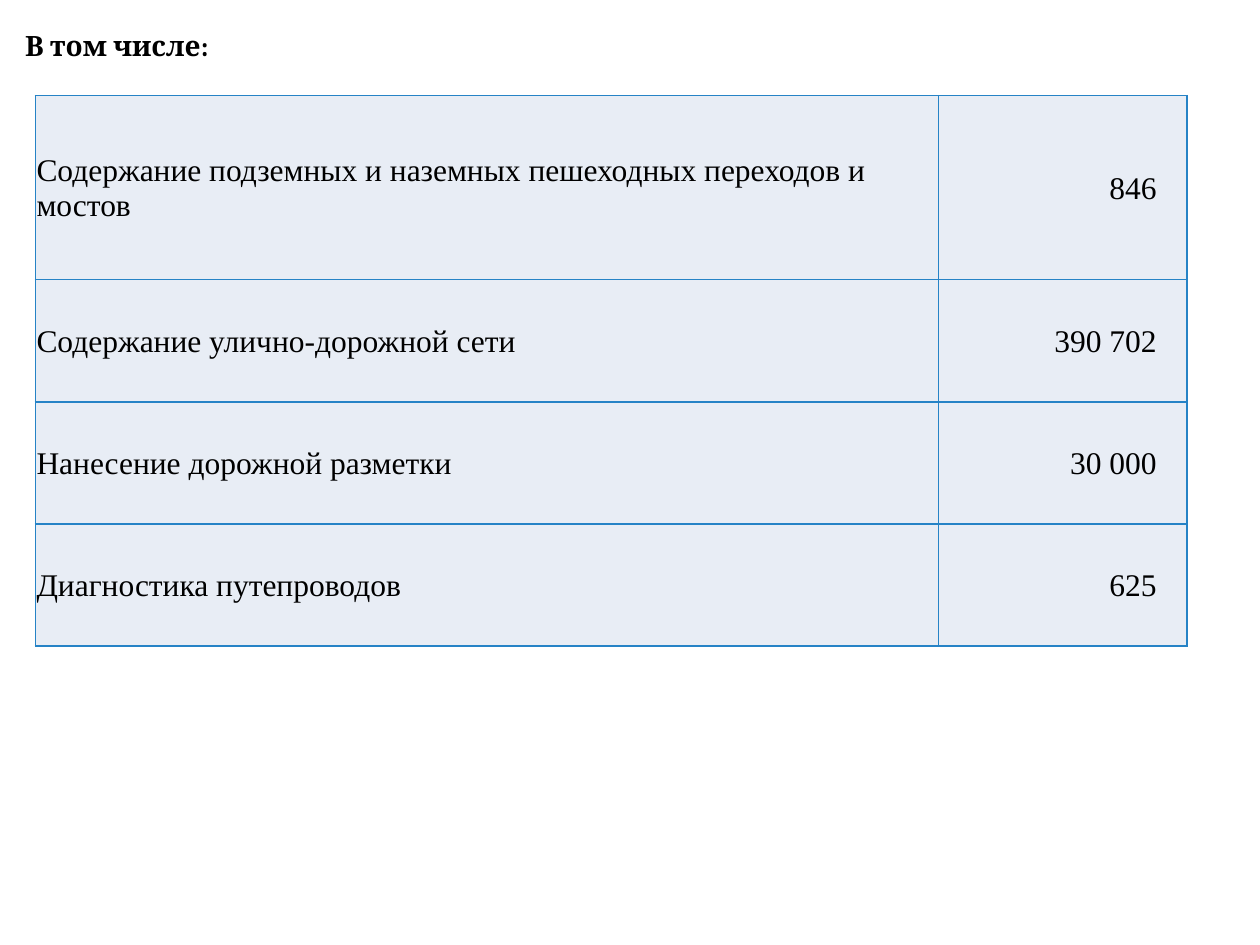
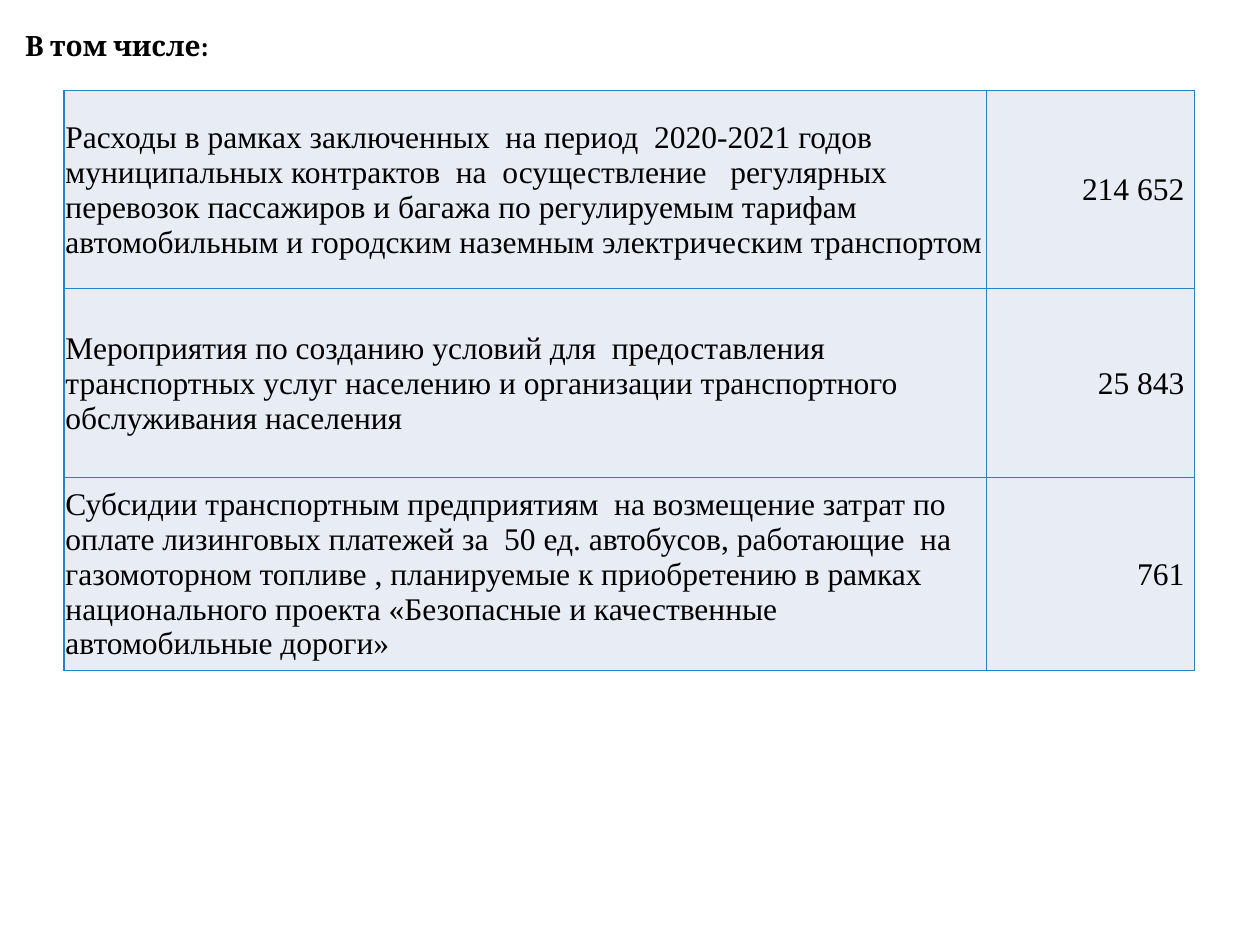
from lxml.etree import SubElement
from pptx import Presentation
from pptx.dml.color import RGBColor
from pptx.enum.text import MSO_ANCHOR, MSO_AUTO_SIZE, PP_ALIGN
from pptx.oxml.ns import qn
from pptx.util import Inches, Pt

BLACK = RGBColor(0x00, 0x00, 0x00)
BORDER = RGBColor(0x26, 0x83, 0xC6)
CELL_FILL = RGBColor(0xE8, 0xED, 0xF5)
TITLE_FONT, TABLE_FONT = "Cambria", "Times New Roman"
TITLE = "В том числе:"
TITLE_BOX = (0, 0.21, 10, 0.55)
CELL_MARGIN = 0.01

ROAD_COSTS = [
    ("Содержание подземных и наземных пешеходных переходов и мостов", "846"),
    ("Содержание улично-дорожной сети", "390 702"),
    ("Нанесение дорожной разметки", "30 000"),
    ("Диагностика путепроводов", "625"),
]
TRANSPORT_COSTS = [
    ("Расходы в рамках заключенных  на период  2020-2021 годов "
     "муниципальных контрактов  на  осуществление   регулярных "
     "перевозок пассажиров и багажа по регулируемым тарифам "
     "автомобильным и городским наземным электрическим транспортом",
     "214 652"),
    ("Мероприятия по созданию условий для  предоставления "
     "транспортных услуг населению и организации транспортного "
     "обслуживания населения", "25 843"),
    ("Субсидии транспортным предприятиям  на возмещение затрат по "
     "оплате лизинговых платежей за  50 ед. автобусов, работающие  на "
     "газомоторном топливе , планируемые к приобретению в рамках "
     "национального проекта «Безопасные и качественные "
     "автомобильные дороги»", "761"),
]


def style_text(p, font, size, bold=False):
    for r in p.runs:
        r.font.name = font
        r.font.size = Pt(size)
        r.font.bold = bold
        r.font.color.rgb = BLACK


def add_title(slide, box):
    sp = slide.shapes.title
    sp.left, sp.top, sp.width, sp.height = map(Inches, box)
    tf = sp.text_frame
    tf.text = TITLE
    tf.auto_size = MSO_AUTO_SIZE.NONE
    tf.vertical_anchor = MSO_ANCHOR.TOP
    tf.margin_left = Inches(0.2)
    p = tf.paragraphs[0]
    p.alignment = PP_ALIGN.LEFT
    p.line_spacing = 0.9
    style_text(p, TITLE_FONT, 16, bold=True)


def add_borders(cell):
    tc_pr = cell._tc.get_or_add_tcPr()
    for side in ("a:lnL", "a:lnR", "a:lnT", "a:lnB"):
        ln = SubElement(tc_pr, qn(side), w=str(Pt(1)))
        fill = SubElement(ln, qn("a:solidFill"))
        SubElement(fill, qn("a:srgbClr"), val=str(BORDER))


def format_cell(cell, text, alignment, right_margin):
    add_borders(cell)
    cell.fill.solid()
    cell.fill.fore_color.rgb = CELL_FILL
    cell.vertical_anchor = MSO_ANCHOR.MIDDLE
    cell.margin_left = cell.margin_top = Inches(CELL_MARGIN)
    cell.margin_right = Inches(right_margin)
    cell.margin_bottom = 0
    p = cell.text_frame.paragraphs[0]
    p.text = text
    p.alignment = alignment
    style_text(p, TABLE_FONT, 18)


def add_cost_table(slide, left, top, col_widths, row_heights, costs, amount_margin):
    size = map(Inches, (left, top, sum(col_widths), sum(row_heights)))
    table = slide.shapes.add_table(len(costs), 2, *size).table
    table.first_row = table.horz_banding = False
    for column, width in zip(table.columns, col_widths):
        column.width = Inches(width)
    for row, height, (item, amount) in zip(table.rows, row_heights, costs):
        row.height = Inches(height)
        format_cell(row.cells[0], item, PP_ALIGN.LEFT, CELL_MARGIN)
        format_cell(row.cells[1], amount, PP_ALIGN.RIGHT, amount_margin)


def add_cost_slide(prs, **table):
    slide = prs.slides.add_slide(prs.slide_layouts[5])
    add_title(slide, TITLE_BOX)
    add_cost_table(slide, **table)


def main():
    prs = Presentation()
    prs.slide_width, prs.slide_height = Inches(10), Inches(7.5)
    # Road maintenance
    add_cost_slide(prs, left=0.28, top=0.76, col_widths=(7.17, 1.97),
                   row_heights=(1.46, 0.97, 0.97, 0.97),
                   costs=ROAD_COSTS, amount_margin=0.24)
    # Passenger transport
    add_cost_slide(prs, left=0.51, top=0.72, col_widths=(7.32, 1.65),
                   row_heights=(1.57, 1.5, 1.53),
                   costs=TRANSPORT_COSTS, amount_margin=0.08)
    prs.save("out.pptx")


if __name__ == "__main__":
    main()
